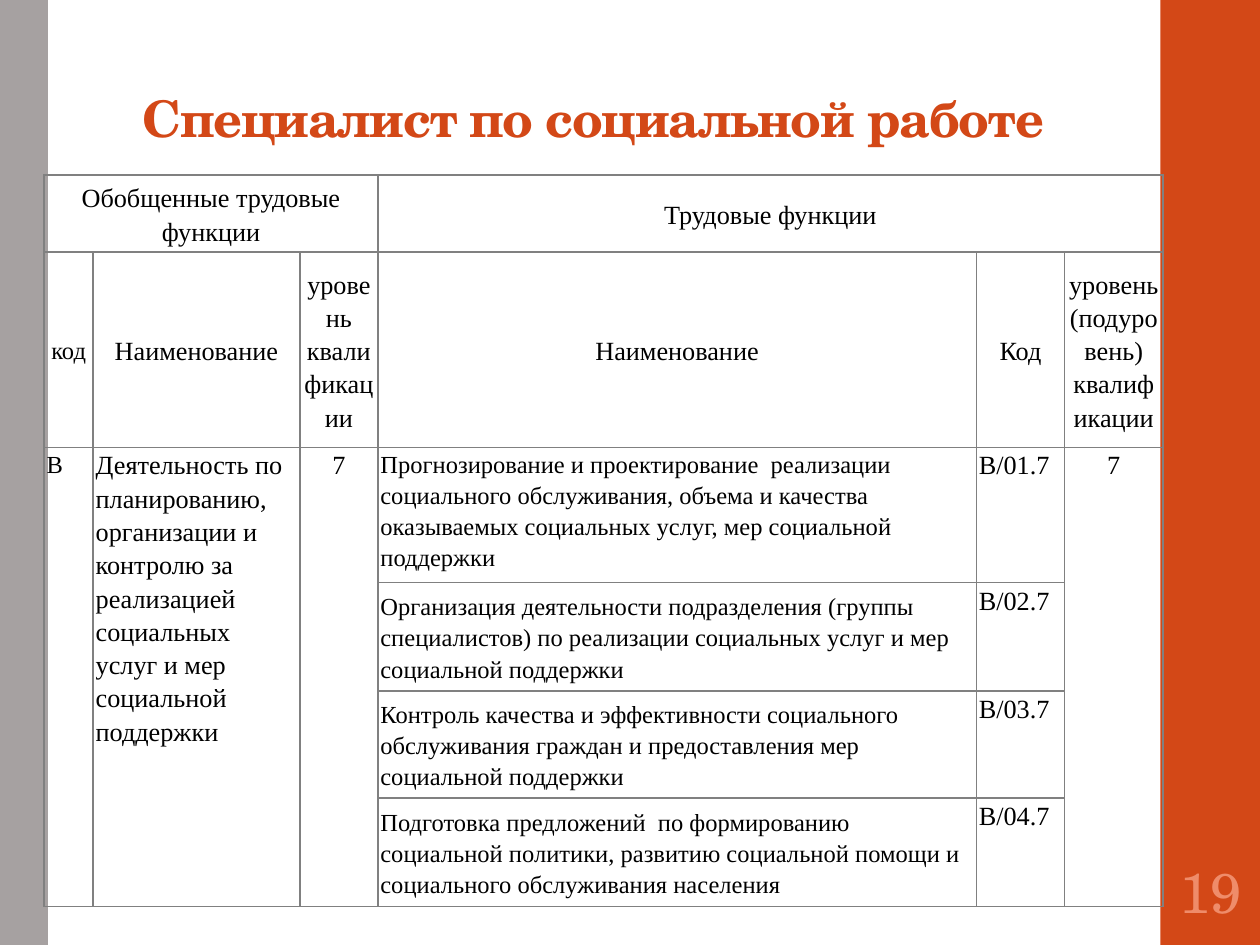
from lxml.etree import SubElement
from pptx import Presentation
from pptx.dml.color import RGBColor
from pptx.enum.shapes import MSO_SHAPE
from pptx.enum.text import MSO_ANCHOR, PP_ALIGN
from pptx.oxml.ns import qn
from pptx.util import Inches, Pt

RUST = RGBColor(0xD3, 0x48, 0x17)
PEACH = RGBColor(0xEF, 0x8C, 0x6A)
STONE = RGBColor(0xA6, 0xA1, 0xA1)
BLACK = RGBColor(0x00, 0x00, 0x00)
GREY = RGBColor(0x80, 0x80, 0x80)
SERIF = "TeX Gyre Schola"
TIMES = "Times New Roman"


def style(run, face, size, color, bold=False):
    font = run.font
    font.name, font.size, font.bold = face, Pt(size), bold
    font.color.rgb = color


def border(cell):
    props = cell._tc.get_or_add_tcPr()
    for side in ("lnL", "lnR", "lnT", "lnB"):
        line = SubElement(props, qn(f"a:{side}"), w=str(Pt(1)))
        fill = SubElement(line, qn("a:solidFill"))
        SubElement(fill, qn("a:srgbClr"), val=str(GREY))


deck = Presentation()
deck.slide_width, deck.slide_height = Inches(10), Inches(7.5)
slide = deck.slides.add_slide(deck.slide_layouts[6])
shapes = slide.shapes

for left, width, color in ((9.21, 0.8, RUST), (0, 0.38, STONE)):
    bar = shapes.add_shape(MSO_SHAPE.RECTANGLE, Inches(left), 0, Inches(width), Inches(7.5))
    bar.shadow.inherit = False
    bar.fill.solid()
    bar.fill.fore_color.rgb = color
    bar.line.fill.background()

title = shapes.add_textbox(Inches(1.03), Inches(0.4), Inches(7.95), Inches(0.83))
frame = title.text_frame
frame.word_wrap = True
frame.vertical_anchor = MSO_ANCHOR.BOTTOM
frame.text = "Специалист по социальной работе"
para = frame.paragraphs[0]
para.line_spacing = 0.9
style(para.runs[0], SERIF, 28.8, RUST, True)
para.runs[0].font._element.set("spc", "-70")

number = shapes.add_textbox(Inches(9.23), Inches(6.75), Inches(0.75), Inches(0.65))
frame = number.text_frame
frame.word_wrap = True
frame.margin_left = frame.margin_right = Inches(0.03)
frame.vertical_anchor = MSO_ANCHOR.MIDDLE
frame.text = "19"
para = frame.paragraphs[0]
para.alignment = PP_ALIGN.CENTER
style(para.runs[0], SERIF, 32, PEACH)

widths = [0.39, 1.64, 0.62, 4.75, 0.7, 0.78]
heights = [0.61, 1.55, 0.94, 0.86, 0.85, 0.86]
rows = [
    ["Обобщенные трудовые функции", "", "", "Трудовые функции", "", ""],
    ["код", "Наименование", "уровень квалификации",
     "Наименование", "Код", "уровень (подуровень) квалификации"],
    ["В",
     "Деятельность по планированию, организации и контролю за реализацией "
     "социальных услуг и мер социальной поддержки",
     "7",
     "Прогнозирование и проектирование  реализации социального обслуживания, "
     "объема и качества оказываемых социальных услуг, мер социальной поддержки",
     "В/01.7", "7"],
    ["", "", "",
     "Организация деятельности подразделения (группы специалистов) "
     "по реализации социальных услуг и мер социальной поддержки",
     "В/02.7", ""],
    ["", "", "",
     "Контроль качества и эффективности социального обслуживания граждан "
     "и предоставления мер социальной поддержки",
     "В/03.7", ""],
    ["", "", "",
     "Подготовка предложений  по формированию социальной политики, "
     "развитию социальной помощи и социального обслуживания населения",
     "В/04.7", ""],
]

table = shapes.add_table(
    len(rows), len(widths), Inches(0.35), Inches(1.39),
    Inches(sum(widths)), Inches(sum(heights))).table
table.first_row = table.horz_banding = False
for col, width in zip(table.columns, widths):
    col.width = Inches(width)
for row, height in zip(table.rows, heights):
    row.height = Inches(height)

for r, texts in enumerate(rows):
    for c, text in enumerate(texts):
        cell = table.cell(r, c)
        border(cell)
        cell.fill.background()
        cell.margin_left = cell.margin_right = Inches(0.02)
        cell.margin_top = cell.margin_bottom = 0
        if not text:
            continue
        if r < 2 or (r > 2 and c == 3):
            cell.vertical_anchor = MSO_ANCHOR.MIDDLE
        cell.text = text
        para = cell.text_frame.paragraphs[0]
        para.line_spacing = 1.15
        if r < 2 or c in (2, 5):
            para.alignment = PP_ALIGN.CENTER
        if r > 2 and c == 4:
            para.space_after = Pt(10)
        small = (r > 0 and c == 0) or (r > 1 and c == 3)
        style(para.runs[0], TIMES, 14 if small else 15, BLACK)

for c in (0, 3):
    table.cell(0, c).merge(table.cell(0, c + 2))
for c in (0, 1, 2, 5):
    table.cell(2, c).merge(table.cell(5, c))

deck.save("out.pptx")
